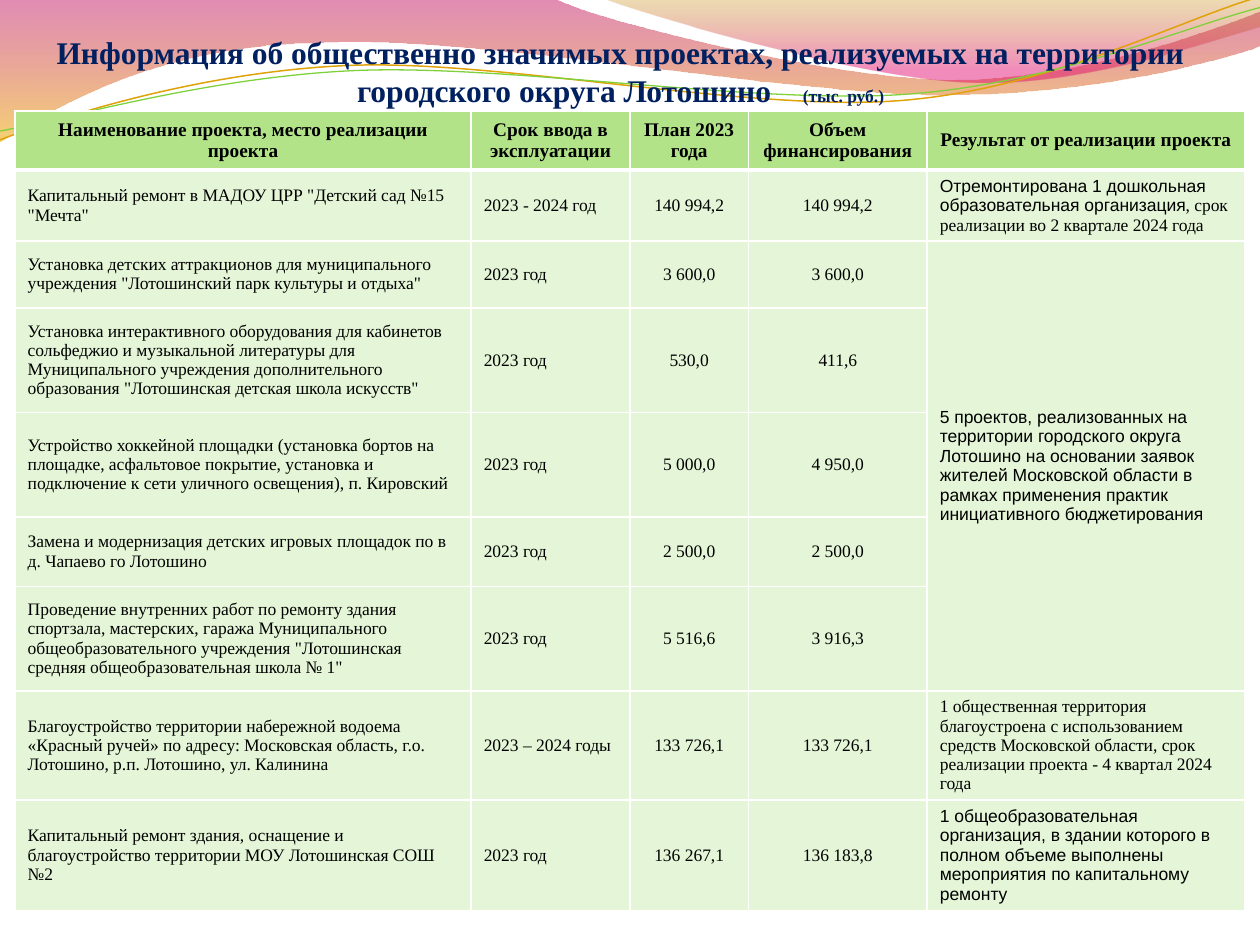
from dataclasses import dataclass

from lxml import etree
from pptx import Presentation
from pptx import util as u
from pptx.dml.color import RGBColor
from pptx.enum import text
from pptx.oxml.ns import qn


@dataclass(frozen=True)
class Theme:
    serif: str = "Times New Roman"
    sans: str = "Arial"
    navy: str = "002060"
    black: str = "000000"
    white: str = "FFFFFF"
    header_fill: str = "B2E389"
    body_fill: str = "E5F6D8"
    orange: str = "E0A209"
    green: str = "7FD13B"
    large_wave: tuple = ((0, "BD0059", 45), (1, "F0AB00", 55))
    small_wave: tuple = ((0, "C38B00", 30), (0.8, "E1006B", 45))
    title_size: int = 18
    header_size: int = 11
    body_size: int = 10
    unit_gap: float = 13.5


THEME = Theme()

LARGE_WAVE = [(0, -0.01), (4.4, -0.01),
              (4.76, 0.17, 6.64, 0.63, 7.58, 0.63), (8.53, 0.63, 9.58, 0.26, 10, 0.09),
              (10.01, 0.36),
              (9.83, 0.44, 8.7, 0.76, 7.46, 0.75), (6.22, 0.75, 3.82, 0.28, 2.57, 0.34),
              (1.29, 0.35, 0.46, 0.83, -0.01, 1.13)]
SMALL_WAVE = [(4.79, -0.01), (5.09, 0.11, 6.82, 0.62, 7.69, 0.65),
              (8.56, 0.69, 9.61, 0.32, 10, 0.21), (10, 0)]
ORANGE_CURVE = [(0, 1.11), (0.48, 0.93, 1.58, 0.57, 2.77, 0.52),
                (3.95, 0.47, 5.93, 0.89, 7.13, 0.8), (8.33, 0.71, 9.38, 0.15, 9.98, -0.02)]
GREEN_CURVE = [(0, 1.04), (0.47, 0.96, 1.64, 0.61, 2.83, 0.56),
               (4.03, 0.51, 5.97, 0.83, 7.17, 0.75), (8.36, 0.67, 9.41, 0.21, 10, 0.06)]

COLUMN_WIDTHS = [3.62, 1.26, 0.94, 1.42, 2.52]
ROW_HEIGHTS = [0.47, 0.38, 0.53, 0.83, 0.83, 0.55, 0.83, 0.53, 0.53]
NUMBER_COLUMNS = (2, 3)
HEADERS = ["Наименование проекта, место реализации проекта", "Срок ввода в эксплуатации",
           "План 2023 года", "Объем финансирования", "Результат от реализации проекта"]
PROJECTS = [
    ['Капитальный ремонт в МАДОУ ЦРР "Детский сад №15 "Мечта"',
     "2023 - 2024 год", "140 994,2", "140 994,2"],
    ['Установка детских аттракционов для муниципального учреждения '
     '"Лотошинский парк культуры и отдыха"', "2023 год", "3 600,0", "3 600,0"],
    ['Установка интерактивного оборудования для кабинетов сольфеджио и музыкальной '
     'литературы для Муниципального учреждения дополнительного образования '
     '"Лотошинская детская школа искусств"', "2023 год", "530,0", "411,6"],
    ["Устройство хоккейной площадки (установка бортов на площадке, асфальтовое покрытие, "
     "установка и подключение к сети уличного освещения), п. Кировский",
     "2023 год", "5 000,0", "4 950,0"],
    ["Замена и модернизация детских игровых площадок по в д. Чапаево го Лотошино",
     "2023 год", "2 500,0", "2 500,0"],
    ['Проведение внутренних работ по ремонту здания спортзала, мастерских, гаража '
     'Муниципального общеобразовательного учреждения "Лотошинская средняя '
     'общеобразовательная школа № 1"', "2023 год", "5 516,6", "3 916,3"],
    ["Благоустройство территории набережной водоема «Красный ручей» по адресу: Московская "
     "область, г.о. Лотошино, р.п. Лотошино, ул. Калинина",
     "2023 – 2024 годы", "133 726,1", "133 726,1"],
    ["Капитальный ремонт здания, оснащение и благоустройство территории МОУ Лотошинская "
     "СОШ №2", "2023 год", "136 267,1", "136 183,8"],
]
RESULTS = {
    1: [("Отремонтирована 1 дошкольная образовательная организация", THEME.sans),
        (", срок реализации во 2 квартале 2024 года", THEME.serif)],
    2: [("5 проектов, реализованных на территории городского округа Лотошино на основании "
         "заявок жителей Московской области в рамках применения практик инициативного "
         "бюджетирования", THEME.sans)],
    7: [("1 общественная территория благоустроена с использованием средств Московской "
         "области, срок реализации проекта - 4 квартал 2024 года", THEME.serif)],
    8: [("1 общеобразовательная организация, в здании которого в полном объеме выполнены "
         "мероприятия по капитальному ремонту", THEME.sans)],
}
SHARED_RESULT_ROWS = (2, 6)


def write(para, words, *, size=THEME.body_size, font=THEME.serif, color=THEME.black,
          bold=False, align=text.PP_ALIGN.LEFT, spacing=0):
    para.alignment = align
    span = para.add_run()
    span.text = words
    span.font.size = u.Pt(size)
    span.font.name = font
    span.font.bold = bold
    span.font.color.rgb = RGBColor.from_string(color)
    if spacing:
        span.font._element.set("spc", str(int(spacing * 100)))


class SlideBuilder:
    """Draw styled elements on the current slide."""

    def __init__(self, page, theme):
        self.page = page
        self.theme = theme

    def outline(self, segments, close):
        points = [(u.Inches(s[i]), u.Inches(s[i + 1]))
                  for s in segments for i in range(0, len(s), 2)]
        builder = self.page.shapes.build_freeform(*points[0])
        builder.add_line_segments(points[1:], close=close)
        shape = builder.convert_to_shape()
        shape.shadow.inherit = False
        lines = iter(list(shape._element.spPr.iter(qn("a:lnTo"))))
        for segment in segments[1:]:
            line = next(lines)
            if len(segment) == 6:
                line.tag = qn("a:cubicBezTo")
                for extra in (next(lines), next(lines)):
                    line.append(extra[0])
                    extra.getparent().remove(extra)
        return shape

    def wave(self, segments, stops):
        shape = self.outline(segments, True)
        shape.line.fill.background()
        shape.fill.gradient()
        shape.fill.gradient_angle = 270
        for stop, (position, color, _) in zip(shape.fill.gradient_stops, stops):
            stop.position = position
            stop.color.rgb = RGBColor.from_string(color)
        colors = list(shape._element.spPr.iter(qn("a:srgbClr")))
        for element, (_, _, opacity) in zip(colors, stops):
            etree.SubElement(element, qn("a:alpha"), val=str(opacity * 1000))

    def curve(self, segments, color, width):
        shape = self.outline(segments, False)
        shape.fill.background()
        shape.line.color.rgb = RGBColor.from_string(color)
        shape.line.width = u.Pt(width)

    def title(self, heading, unit):
        theme = self.theme
        box = self.page.shapes.title
        box.left, box.top = u.Inches(0.12), u.Inches(0.21)
        box.width, box.height = u.Inches(9.61), u.Inches(0.71)
        frame = box.text_frame
        frame.auto_size = text.MSO_AUTO_SIZE.NONE
        frame.word_wrap = True
        frame.vertical_anchor = text.MSO_ANCHOR.TOP
        for words, size, spacing in ((heading, theme.title_size, 0),
                                     (" ", theme.title_size, theme.unit_gap),
                                     (unit, theme.body_size, 0)):
            write(frame.paragraphs[0], words, size=size, color=theme.navy, bold=True,
                  align=text.PP_ALIGN.CENTER, spacing=spacing)
        self.page.shapes._spTree.append(box._element)

    def cell(self, cell, spans, fill, *, top=1, bottom=1, **style):
        properties = cell._tc.get_or_add_tcPr()
        for side, width in (("L", 1), ("R", 1), ("T", top), ("B", bottom)):
            border = etree.SubElement(properties, qn(f"a:ln{side}"), w=str(u.Pt(width)))
            solid = etree.SubElement(border, qn("a:solidFill"))
            etree.SubElement(solid, qn("a:srgbClr"), val=self.theme.white)
        cell.fill.solid()
        cell.fill.fore_color.rgb = RGBColor.from_string(fill)
        cell.vertical_anchor = text.MSO_ANCHOR.MIDDLE
        for words, font in spans:
            write(cell.text_frame.paragraphs[0], words, font=font, **style)

    def table(self):
        theme = self.theme
        frame = self.page.shapes.add_table(
            len(ROW_HEIGHTS), len(COLUMN_WIDTHS), u.Inches(0.12), u.Inches(0.88),
            u.Inches(sum(COLUMN_WIDTHS)), u.Inches(6.5))
        grid = frame.table
        grid.horz_banding = False
        for column, width in zip(grid.columns, COLUMN_WIDTHS):
            column.width = u.Inches(width)
        for row, height in zip(grid.rows, ROW_HEIGHTS):
            row.height = u.Inches(height)
        frame.height = u.Inches(6.5)
        result_column = len(COLUMN_WIDTHS) - 1
        first, last = SHARED_RESULT_ROWS
        grid.cell(first, result_column).merge(grid.cell(last, result_column))
        for column, words in enumerate(HEADERS):
            self.cell(grid.cell(0, column), [(words, theme.serif)], theme.header_fill, bottom=3,
                      size=theme.header_size, bold=True, align=text.PP_ALIGN.CENTER)
        for row, project in enumerate(PROJECTS, 1):
            top = 3 if row == 1 else 1
            for column, words in enumerate(project):
                centred = column in NUMBER_COLUMNS
                self.cell(grid.cell(row, column), [(words, theme.serif)], theme.body_fill, top=top,
                          align=text.PP_ALIGN.CENTER if centred else text.PP_ALIGN.LEFT)
            self.cell(grid.cell(row, result_column), RESULTS.get(row, []), theme.body_fill, top=top)


def main():
    deck = Presentation()
    deck.slide_width, deck.slide_height = u.Inches(10), u.Inches(7.5)
    slide = SlideBuilder(deck.slides.add_slide(deck.slide_layouts[5]), THEME)
    slide.wave(LARGE_WAVE, THEME.large_wave)
    slide.wave(SMALL_WAVE, THEME.small_wave)
    slide.curve(ORANGE_CURVE, THEME.orange, 0.85)
    slide.curve(GREEN_CURVE, THEME.green, 0.75)
    slide.title("Информация об общественно значимых проектах, реализуемых на территории "
                "городского округа Лотошино", "(тыс. руб.)")
    slide.table()
    deck.save("out.pptx")


if __name__ == "__main__":
    main()
